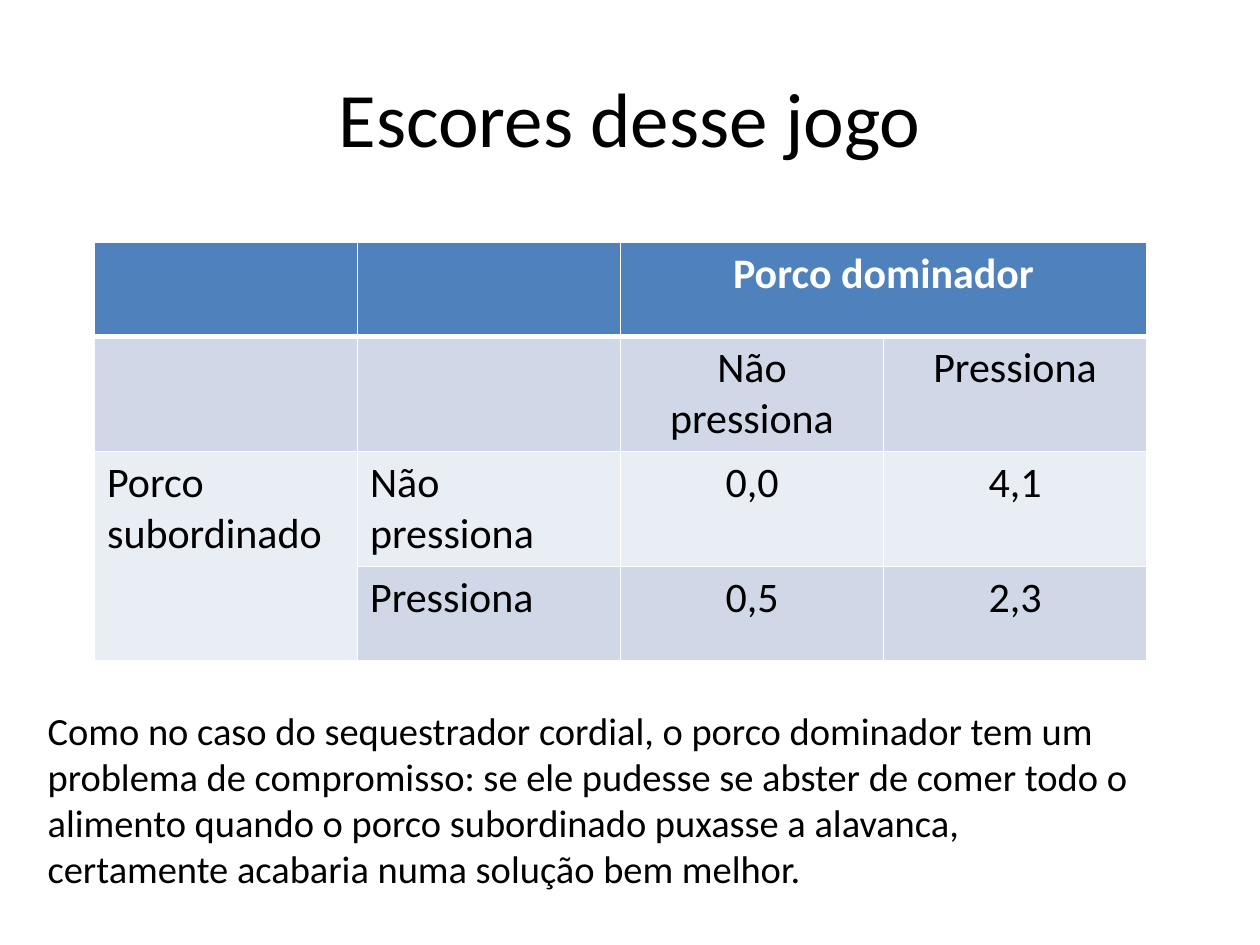
"""Build a slide with the payoff table of the dominant and subordinate pig game."""
from lxml import etree
from pptx import Presentation
from pptx.dml.color import RGBColor
from pptx.enum import text
from pptx.oxml import ns
from pptx.util import Inches, Pt

FONT = "Calibri"
COLORS = {"black": "000000", "white": "FFFFFF", "header": "4F81BD",
          "dark": "D0D8E8", "light": "E9EDF4"}
ROW_FILLS = ("header", "dark", "light", "dark")
SCORES = (
    ("", "", "Porco dominador", ""),
    ("", "", "Não pressiona", "Pressiona"),
    ("Porco subordinado", "Não pressiona", "0,0", "4,1"),
    ("", "Pressiona", "0,5", "2,3"),
)
COMMENT = ("Como no caso do sequestrador cordial, o porco dominador tem um "
           "problema de compromisso: se ele pudesse se abster de comer todo o "
           "alimento quando o porco subordinado puxasse a alavanca, certamente "
           "acabaria numa solução bem melhor.")


def write(frame, words, size, color="black", bold=False, align=text.PP_ALIGN.LEFT):
    para = frame.paragraphs[0]
    para.alignment = align
    span = para.add_run()
    span.text = words
    span.font.name = FONT
    span.font.size = Pt(size)
    span.font.bold = bold
    span.font.color.rgb = RGBColor.from_string(COLORS[color])


def add_border(cell, side, points):
    properties = cell._tc.get_or_add_tcPr()
    line = etree.SubElement(properties, ns.qn(f"a:ln{side}"), w=str(Pt(points)))
    fill = etree.SubElement(line, ns.qn("a:solidFill"))
    etree.SubElement(fill, ns.qn("a:srgbClr"), val=COLORS["white"])


def add_title(page, words):
    title = page.shapes.title
    title.left, title.top = Inches(0.5), Inches(0.3)
    title.width, title.height = Inches(9), Inches(1.25)
    title.text_frame.vertical_anchor = text.MSO_ANCHOR.MIDDLE
    write(title.text_frame, words, 44, align=text.PP_ALIGN.CENTER)


def format_cell(cell, row, column, words):
    thick_sides = {0: "B", 1: "T"}
    for side in "LRTB":
        add_border(cell, side, 3 if thick_sides.get(row) == side else 1)
    cell.fill.solid()
    cell.fill.fore_color.rgb = RGBColor.from_string(COLORS[ROW_FILLS[row]])
    if words:
        header = row == 0
        align = text.PP_ALIGN.CENTER if column >= 2 else text.PP_ALIGN.LEFT
        write(cell.text_frame, words, 24, "white" if header else "black", header, align)


def add_scores(page):
    table = page.shapes.add_table(
        len(SCORES), len(SCORES[0]),
        Inches(0.75), Inches(1.92), Inches(8.35), Inches(3)).table
    for row, entries in enumerate(SCORES):
        for column, words in enumerate(entries):
            format_cell(table.cell(row, column), row, column, words)
    table.cell(0, 2).merge(table.cell(0, 3))
    table.cell(2, 0).merge(table.cell(3, 0))


def add_comment(page, words):
    box = page.shapes.add_textbox(Inches(0.28), Inches(5.56), Inches(8.9), Inches(1.58))
    frame = box.text_frame
    frame.word_wrap = True
    frame.auto_size = text.MSO_AUTO_SIZE.SHAPE_TO_FIT_TEXT
    write(frame, words, 22)


def main():
    deck = Presentation()
    deck.slide_width, deck.slide_height = Inches(10), Inches(7.5)
    page = deck.slides.add_slide(deck.slide_layouts[5])
    add_title(page, "Escores desse jogo")
    add_scores(page)
    add_comment(page, COMMENT)
    deck.save("out.pptx")


if __name__ == "__main__":
    main()
